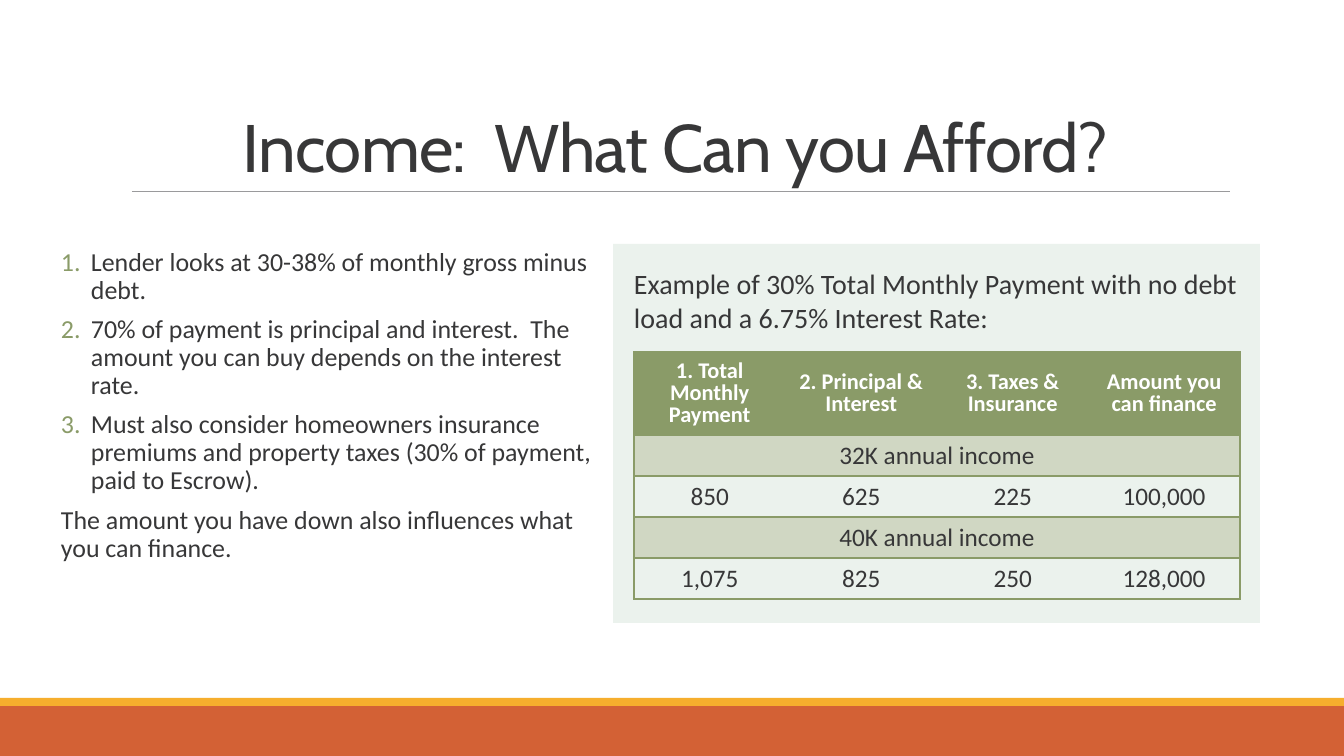
import pptx
import pptx.dml.color
import pptx.enum.shapes
import pptx.enum.text
import pptx.oxml
import pptx.oxml.ns
import pptx.util

EMU_PER_PX = 914400 / 100.8
INK, OLIVE, SAGE, WHITE = "373738", "8A9B68", "D0D7C3", "FFFFFF"
NO_STYLE = "{2D5ABB26-0587-4C30-8999-92F81FD0307C}"
ALIGN = pptx.enum.text.PP_ALIGN
ANCHOR = pptx.enum.text.MSO_ANCHOR

POINTS = [
    "Lender looks at 30-38% of monthly gross minus debt.",
    "70% of payment is principal and interest.  The amount you can buy depends on the interest rate.",
    "Must also consider homeowners insurance premiums and property taxes (30% of payment, paid to Escrow).",
]
CLOSING = "The amount you have down also influences what you can finance."
ROWS = [
    ["1. Total Monthly Payment", "2. Principal & Interest", "3. Taxes & Insurance", "Amount you can finance"],
    ["32K annual income"],
    ["850", "625", "225", "100,000"],
    ["40K annual income"],
    ["1,075", "825", "250", "128,000"],
]


def px(n):
    return pptx.util.Emu(round(n * EMU_PER_PX))


def rgb(value):
    return pptx.dml.color.RGBColor.from_string(value)


def add_xml(parent, body):
    """Append a DrawingML element written as text."""
    tag, rest = body[1:].split(" ", 1)
    parent.append(pptx.oxml.parse_xml(f"<{tag} {pptx.oxml.ns.nsdecls('a')} {rest}"))


def add_rect(s, x, y, w, h, color):
    sp = s.shapes.add_shape(pptx.enum.shapes.MSO_SHAPE.RECTANGLE, px(x), px(y), px(w), px(h))
    sp.shadow.inherit = False
    sp.fill.solid()
    sp.fill.fore_color.rgb = rgb(color)
    sp.line.fill.background()


def add_rule(s, x1, x2, y, color):
    line = s.shapes.add_connector(pptx.enum.shapes.MSO_CONNECTOR.STRAIGHT, px(x1), px(y), px(x2), px(y))
    line.line.color.rgb = rgb(color)
    line.line.width = pptx.util.Pt(0.5)
    add_xml(line._element.spPr, "<a:effectLst />")


def style_runs(p, size, color=INK, font="Calibri", bold=False):
    for r in p.runs:
        r.font.name = font
        r.font.size = pptx.util.Pt(size)
        r.font.bold = bold
        r.font.color.rgb = rgb(color)


def add_text(s, x, y, w, h, lines, size, spacing=1.0, font="Calibri", inset=0):
    """Add a wrapped text box with one paragraph per line and return its frame."""
    tf = s.shapes.add_textbox(px(x), px(y), px(w), px(h)).text_frame
    tf.word_wrap = True
    tf.margin_left = tf.margin_right = px(inset)
    tf.text = "\n".join(lines)
    for i, p in enumerate(tf.paragraphs):
        p.line_spacing = spacing
        p.space_before = pptx.util.Pt(6 if i else 0)
        p.space_after = pptx.util.Pt(2)
        style_runs(p, size, font=font)
    return tf


def number(p):
    pPr = p._p.get_or_add_pPr()
    pPr.set("marL", str(px(30)))
    pPr.set("indent", str(-px(30)))
    add_xml(pPr, f'<a:buClr ><a:srgbClr val="{OLIVE}"/></a:buClr>')
    add_xml(pPr, '<a:buAutoNum type="arabicPeriod"/>')


def add_title(s, text):
    tf = add_text(s, 121, 31, 1109, 160, [text], 48, 0.85, "Cabin", inset=10)
    tf.vertical_anchor = ANCHOR.BOTTOM
    p = tf.paragraphs[0]
    p.alignment = ALIGN.CENTER
    p.space_after = pptx.util.Pt(0)
    p.runs[0].font._element.set("spc", "-50")


def format_cell(cell, sides, fill, size, color, bold, spacing):
    """Set borders on the given sides, then fill and text format."""
    for side in sides:
        add_xml(cell._tc.get_or_add_tcPr(),
                f'<a:ln{side} w="12700"><a:solidFill><a:srgbClr val="{OLIVE}"/></a:solidFill></a:ln{side}>')
    if fill:
        cell.fill.solid()
        cell.fill.fore_color.rgb = rgb(fill)
    else:
        cell.fill.background()
    cell.vertical_anchor = ANCHOR.MIDDLE
    p = cell.text_frame.paragraphs[0]
    p.alignment = ALIGN.CENTER
    p.line_spacing = spacing
    style_runs(p, size, color, bold=bold)


def add_payment_table(s, x, y, w, header_h, row_h):
    """Add the payment table, merging each one-item row across all columns."""
    cols = len(ROWS[0])
    frame = s.shapes.add_table(len(ROWS), cols, px(x), px(y), px(w), px(header_h + row_h * (len(ROWS) - 1)))
    table = frame.table
    table.horz_banding = False
    table._tbl.tblPr.find(pptx.oxml.ns.qn("a:tableStyleId")).text = NO_STYLE
    for i, texts in enumerate(ROWS):
        table.rows[i].height = px(row_h if i else header_h)
        if len(texts) == 1:
            table.cell(i, 0).merge(table.cell(i, cols - 1))
        for j, text in enumerate(texts):
            table.cell(i, j).text_frame.text = text
        fill = SAGE if len(texts) == 1 else None
        look = (fill, 18, INK, False, 1.0) if i else (OLIVE, 16, WHITE, True, 0.8)
        for j in range(cols):
            first, last = j == 0, j == len(texts) - 1 or j == cols - 1
            sides = ["L"] * first + ["R"] * last + ["T", "B"]
            format_cell(table.cell(i, j), sides, *look)


def main():
    prs = pptx.Presentation()
    prs.slide_width, prs.slide_height = px(1344), px(756)
    s = prs.slides.add_slide(prs.slide_layouts[6])
    add_rect(s, 0, 706, 1344, 50, "D36135")
    add_rect(s, 0, 698, 1344, 8, "F6AE2D")
    add_rule(s, 132, 1230, 191, "9A9A9C")
    add_rect(s, 613, 244, 647, 379, "EBF2ED")
    add_title(s, "Income:  What Can you Afford?")
    body = add_text(s, 61, 244, 542, 353, POINTS + [CLOSING], 18.5, 0.9)
    for p in body.paragraphs[:len(POINTS)]:
        number(p)
    add_payment_table(s, 634, 352, 606, 83, 41)
    add_text(s, 634, 262, 606, 79,
             ["Example of 30% Total Monthly Payment with no debt load and a 6.75% Interest Rate:"], 20)
    prs.save("out.pptx")


if __name__ == "__main__":
    main()
